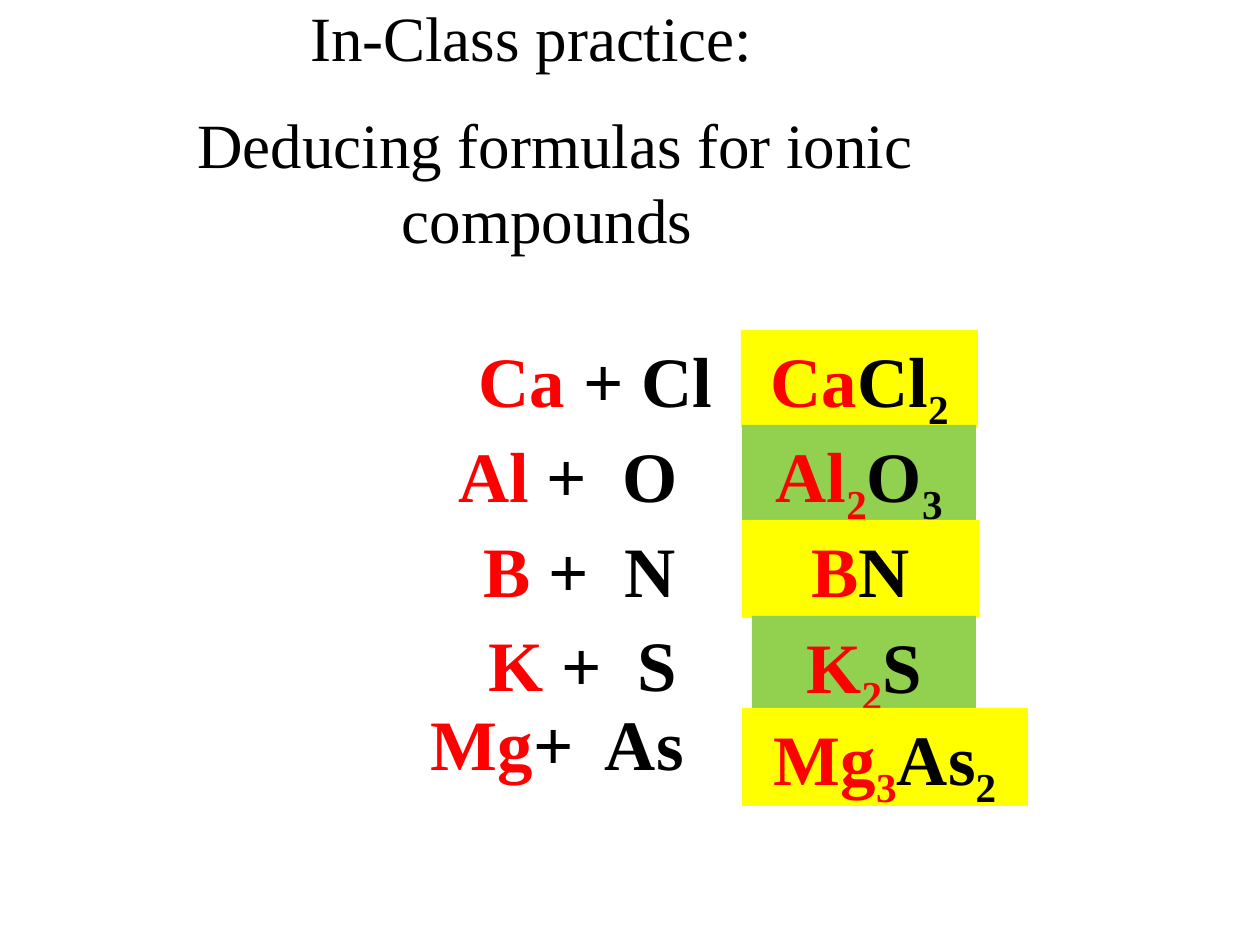
from lxml.etree import SubElement
from pptx import Presentation
from pptx.dml.color import RGBColor
from pptx.enum.shapes import MSO_SHAPE
from pptx.enum.text import MSO_ANCHOR, MSO_AUTO_SIZE, PP_ALIGN
from pptx.oxml.ns import qn
from pptx.util import Emu, Pt

SCALE = 914400 / 126
BLACK, RED, YELLOW, GREEN = "000000", "FF0000", "FFFF00", "92D050"
ROW_HEIGHT = 98


def px(length):
    return Emu(round(length * SCALE))


def write(shape, paragraphs, size, bold):
    """Fill a shape with centred paragraphs of (text, colour, is_subscript) runs."""
    frame = shape.text_frame
    frame.word_wrap = True
    frame.auto_size = MSO_AUTO_SIZE.SHAPE_TO_FIT_TEXT
    frame.vertical_anchor = MSO_ANCHOR.TOP
    for number, runs in enumerate(paragraphs):
        paragraph = frame.add_paragraph() if number else frame.paragraphs[0]
        paragraph.alignment = PP_ALIGN.CENTER
        # Space before: half a line
        before = SubElement(paragraph._p.get_or_add_pPr(), qn("a:spcBef"))
        SubElement(before, qn("a:spcPct")).set("val", "50000")
        for text, colour, is_subscript in runs:
            run = paragraph.add_run()
            run.text = text
            run.font.name = "Times New Roman"
            run.font.size = Pt(size)
            run.font.bold = bold
            run.font.color.rgb = RGBColor.from_string(colour)
            if is_subscript:
                run.font._element.set("baseline", "-25000")


presentation = Presentation()
presentation.slide_width, presentation.slide_height = px(1260), px(945)
slide = presentation.slides.add_slide(presentation.slide_layouts[6])

# Heading
heading = slide.shapes.add_textbox(px(130), px(-8), px(850), px(280))
heading_lines = ["In-Class practice:   ", "Deducing formulas for ionic compounds "]
write(heading, [[(line, BLACK, False)] for line in heading_lines], 36, False)

# Element pairs: metal in red, nonmetal in black
pairs = [
    (426, 330, 339, "Ca", " + Cl"),
    (426, 425, 284, "Al", " +  O"),
    (438, 520, 284, "B", " +  N"),
    (441, 614, 284, "K", " +  S"),
    (370, 693, 339, "  Mg", "+  As"),
]
for left, top, width, metal, nonmetal in pairs:
    pair = slide.shapes.add_textbox(px(left), px(top), px(width), px(ROW_HEIGHT))
    write(pair, [[(metal, RED, False), (nonmetal, BLACK, False)]], 40.5, True)

# Answers: each element with its subscript, on alternating fills
answers = [
    (741, 330, 237, "Ca", "", "Cl", "2"),
    (742, 425, 234, "Al", "2", "O", "3"),
    (742, 520, 237, "B", "", "N", ""),
    (752, 616, 224, "K", "2", "S", ""),
    (742, 708, 286, "Mg", "3", "As", "2"),
]
for row, (left, top, width, metal, metal_count, nonmetal, nonmetal_count) in enumerate(answers):
    answer = slide.shapes.add_shape(
        MSO_SHAPE.RECTANGLE, px(left), px(top), px(width), px(ROW_HEIGHT))
    answer.shadow.inherit = False
    answer.fill.solid()
    answer.fill.fore_color.rgb = RGBColor.from_string(GREEN if row % 2 else YELLOW)
    answer.line.fill.background()
    formula = [(metal, RED, False), (metal_count, RED, True),
               (nonmetal, BLACK, False), (nonmetal_count, BLACK, True)]
    write(answer, [[part for part in formula if part[0]]], 40.5, True)

presentation.save("out.pptx")
